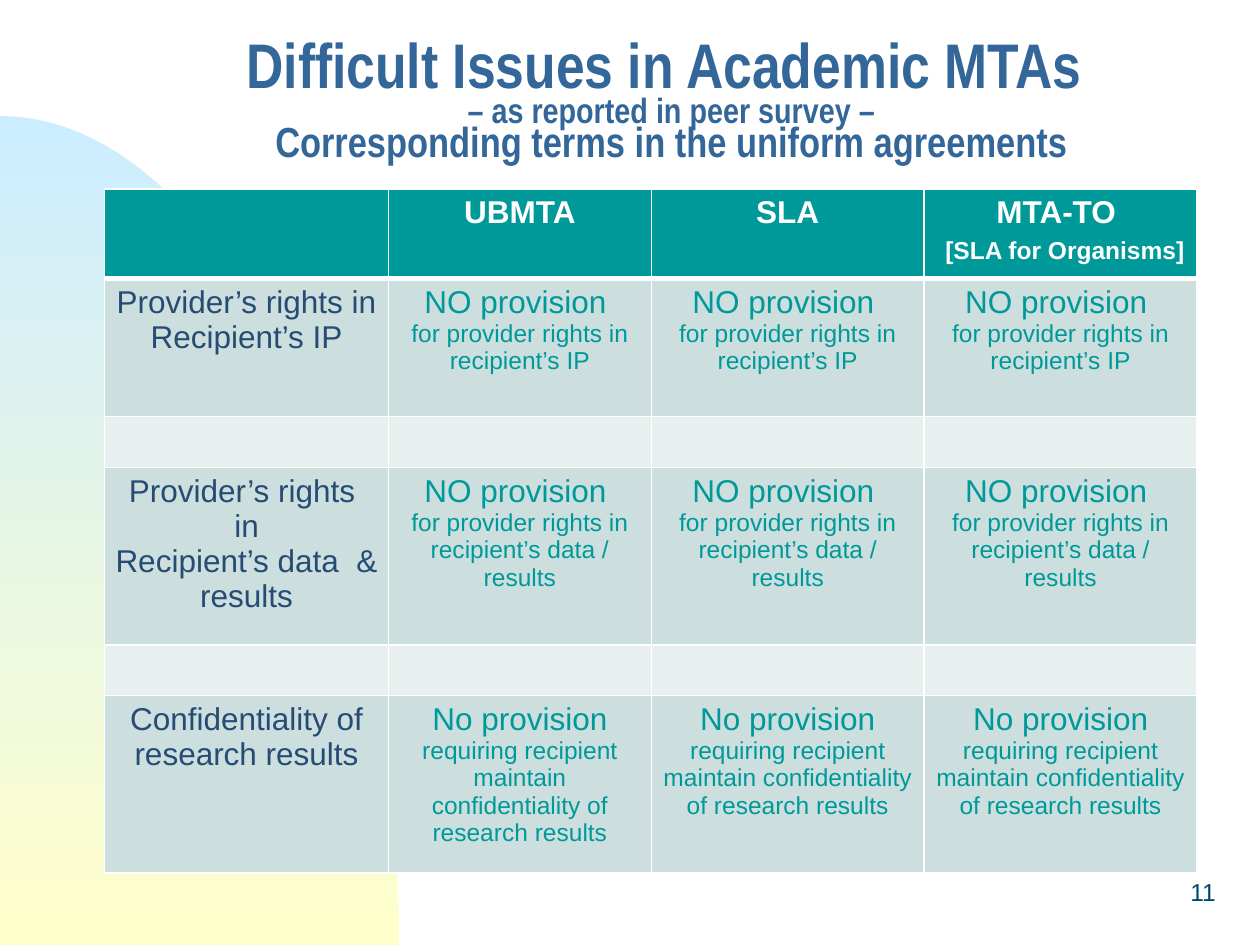
from lxml import etree
from pptx import Presentation
from pptx.dml.color import RGBColor
from pptx.enum.text import MSO_ANCHOR, PP_ALIGN
from pptx.oxml.ns import qn
from pptx.util import Cm, Pt

CENTER, RIGHT = PP_ALIGN.CENTER, PP_ALIGN.RIGHT
MIDDLE = MSO_ANCHOR.MIDDLE
WHITE = RGBColor(0xFF, 0xFF, 0xFF)
SKY = RGBColor(0xCC, 0xEC, 0xFF)
CREAM = RGBColor(0xFF, 0xFF, 0xCC)
BLUE = RGBColor(0x33, 0x66, 0x99)
NAVY = RGBColor(0x26, 0x4C, 0x73)
DEEP = RGBColor(0x00, 0x48, 0x73)
TEAL = RGBColor(0x00, 0x99, 0x99)
BAND = RGBColor(0xCC, 0xDE, 0xDE)
PALE = RGBColor(0xE7, 0xEF, 0xEF)

TITLE = [("Difficult Issues in Academic MTAs ", 36),
         ("– as reported in peer survey –", 20),
         ("Corresponding terms in the uniform agreements", 24)]
HEADERS = [[], [[("UBMTA", 18)]], [[("SLA", 18)]],
           [[("MTA-TO ", 18)], [(" ", 18), ("[SLA for Organisms]", 14)]]]
ISSUES = [
    (["Provider’s rights in ", "Recipient’s IP"],
     "NO provision ", "for provider rights in recipient’s IP"),
    (["Provider’s rights ", "in", "Recipient’s data  & results"],
     "NO provision ", "for provider rights in recipient’s data / results"),
    (["Confidentiality of research results"],
     "No provision", "requiring recipient maintain confidentiality of research results"),
]
COLUMNS = [5.72, 5.3, 5.5, 5.5]
ROWS = [1.8, 2.79, 1.02, 3.58, 1.02, 3.58]


def add_run(p, text, size=18, color=NAVY, bold=False, font="Arial"):
    """Append one formatted run to a paragraph."""
    r = p.add_run()
    r.text = text
    r.font.size, r.font.bold, r.font.name = Pt(size), bold, font
    r.font.color.rgb = color


def add_box(s, left, top, width, height, align):
    """Add a middle-anchored text box and return its first paragraph."""
    tf = s.shapes.add_textbox(Cm(left), Cm(top), Cm(width), Cm(height)).text_frame
    tf.word_wrap, tf.vertical_anchor = True, MIDDLE
    p = tf.paragraphs[0]
    p.alignment = align
    return p


def curve_point(t):
    """Return the quarter-ellipse Bezier point at t, as fractions of its box."""
    u = 1 - t
    return 3 * u * u * t * 0.55 + 3 * u * t * t + t ** 3, 3 * u * t * t * 0.45 + t ** 3


def add_backdrop(s, top=2.34, width=8.05, bottom=19.05, steps=60):
    """Draw the curved panel with a vertical gradient."""
    curve = [curve_point(i / steps) for i in range(1, steps + 1)]
    points = [(Cm(width * x), Cm(top + (bottom - top) * y)) for x, y in curve]
    builder = s.shapes.build_freeform(0, Cm(top), scale=1.0)
    builder.add_line_segments(points + [(0, Cm(bottom))])
    panel = builder.convert_to_shape()
    panel.shadow.inherit = False
    panel.line.fill.background()
    panel.fill.gradient()
    panel.fill.gradient_angle = 270
    for stop, color in zip(panel.fill.gradient_stops, (SKY, CREAM)):
        stop.color.rgb = color


def add_title(s):
    """Write the three-line title with line breaks."""
    p = add_box(s, 2.74, 0.64, 21.59, 2.97, CENTER)
    p.line_spacing = 0.7
    for i, (text, size) in enumerate(TITLE):
        if i:
            p.add_line_break()
        add_run(p, text, size, BLUE, True, "Arial Narrow")


def set_borders(cell, bottom):
    """Give a cell white borders, with its own bottom width."""
    tc_pr = cell._tc.get_or_add_tcPr()
    sides = (("a:lnL", 1), ("a:lnR", 1), ("a:lnT", 1), ("a:lnB", bottom))
    for i, (tag, width) in enumerate(sides):
        ln = etree.Element(qn(tag), w=str(Pt(width)))
        fill = etree.SubElement(ln, qn("a:solidFill"))
        etree.SubElement(fill, qn("a:srgbClr"), val=str(WHITE))
        tc_pr.insert(i, ln)


def fill_cell(cell, paragraphs, fill, color=TEAL, bold=False, bottom=1):
    """Fill a cell and write its centred paragraphs."""
    cell.fill.solid()
    cell.fill.fore_color.rgb = fill
    cell.margin_left = cell.margin_right = Cm(0.18)
    set_borders(cell, bottom)
    for i, runs in enumerate(paragraphs):
        p = cell.text_frame.add_paragraph() if i else cell.text_frame.paragraphs[0]
        p.alignment = CENTER
        for text, size in runs:
            add_run(p, text, size, color, bold)


def add_terms_table(s):
    """Build the table of issues, with a pale spacer row between issues."""
    table = s.shapes.add_table(len(ROWS), len(COLUMNS), Cm(2.11), Cm(3.81),
                               Cm(sum(COLUMNS)), Cm(sum(ROWS))).table
    for column, width in zip(table.columns, COLUMNS):
        column.width = Cm(width)
    for row, height in zip(table.rows, ROWS):
        row.height = Cm(height)
    for c, header in enumerate(HEADERS):
        fill_cell(table.cell(0, c), header, TEAL, WHITE, True, bottom=3)
    for i, (label, head, detail) in enumerate(ISSUES):
        r = 2 * i + 1
        fill_cell(table.cell(r, 0), [[(line, 18)] for line in label], BAND, NAVY)
        for c in range(1, len(COLUMNS)):
            fill_cell(table.cell(r, c), [[(head, 18)], [(detail, 14)]], BAND)
        if r + 1 < len(ROWS):
            for c in range(len(COLUMNS)):
                fill_cell(table.cell(r + 1, c), [], PALE)


def main():
    """Create the slide and save it."""
    prs = Presentation()
    prs.slide_width, prs.slide_height = Cm(25.4), Cm(19.05)
    s = prs.slides.add_slide(prs.slide_layouts[6])
    add_backdrop(s)
    add_title(s)
    add_terms_table(s)
    add_run(add_box(s, 19.48, 17.35, 5.28, 1.27, RIGHT), "11", 14, DEEP)
    prs.save("out.pptx")


if __name__ == "__main__":
    main()
